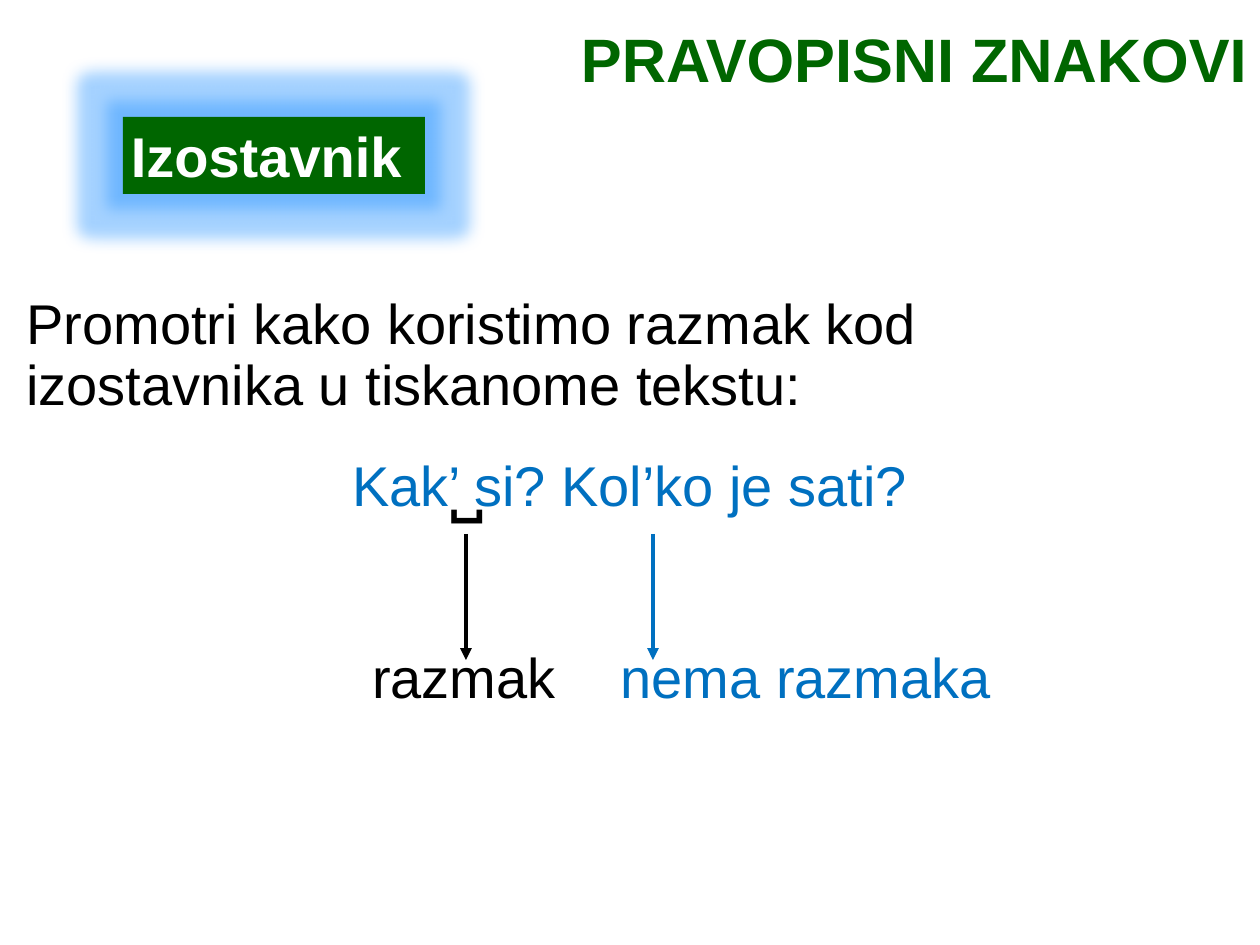
from collections import namedtuple
from dataclasses import dataclass

from lxml import etree
from pptx import Presentation
from pptx import util as u
from pptx.dml.color import RGBColor
from pptx.enum import shapes, text
from pptx.oxml import ns

Box = namedtuple("Box", "left top width height")
EMU_PER_PX = 914400 / 126


@dataclass(frozen=True)
class Theme:
    font: str = "Arial"
    green: str = "006600"
    blue: str = "0070C0"
    black: str = "000000"
    white: str = "FFFFFF"
    glow: str = "2090FF"
    title: int = 35
    body: int = 32
    mark: int = 48
    line: float = 2.25


THEME = Theme()


def px(length):
    return u.Emu(round(length * EMU_PER_PX))


def emu(*lengths):
    return [px(length) for length in lengths]


def add_xml(parent, tag, **attributes):
    return etree.SubElement(parent, ns.qn(tag), attributes)


def add_text(page, box, words, size=THEME.body, color=THEME.black, bold=False,
             align=text.PP_ALIGN.LEFT, anchor=text.MSO_ANCHOR.TOP,
             spacing=0.9, before=7.5, inset=None):
    frame = page.shapes.add_textbox(*emu(*box)).text_frame
    frame.word_wrap = True
    frame.vertical_anchor = anchor
    if inset:
        frame.margin_left = frame.margin_right = px(inset[0])
        frame.margin_top = frame.margin_bottom = px(inset[1])
    para = frame.paragraphs[0]
    para.alignment = align
    para.line_spacing = spacing
    para.space_before = u.Pt(before)
    span = para.add_run()
    span.text = words
    span.font.name = THEME.font
    span.font.size = u.Pt(size)
    span.font.bold = bold
    span.font.color.rgb = RGBColor.from_string(color)


def add_arrow(page, left, top, length, color):
    arrow = page.shapes.add_connector(
        shapes.MSO_CONNECTOR.STRAIGHT, *emu(left, top, left, top + length))
    arrow.line.color.rgb = RGBColor.from_string(color)
    arrow.line.width = u.Pt(THEME.line)
    add_xml(arrow.line._get_or_add_ln(), "a:tailEnd", type="triangle")
    add_xml(arrow._element.spPr, "a:effectLst")


def add_topic(page, box):
    panel = page.shapes.add_shape(
        shapes.MSO_SHAPE.RECTANGLE,
        *emu(box.left + 1, box.top + 29, box.width - 1, box.height - 29))
    panel.fill.solid()
    panel.fill.fore_color.rgb = RGBColor.from_string(THEME.green)
    panel.line.fill.background()
    panel.shadow.inherit = False
    effects = panel._element.spPr.find(ns.qn("a:effectLst"))
    glow = add_xml(effects, "a:glow", rad=str(px(31)))
    color = add_xml(glow, "a:srgbClr", val=THEME.glow)
    add_xml(color, "a:alpha", val="40000")
    add_text(page, box, "Izostavnik", color=THEME.white, bold=True,
             anchor=text.MSO_ANCHOR.BOTTOM, spacing=1, before=10, inset=(9, 5))


def add_heading(page, box):
    add_text(page, box, "PRAVOPISNI ZNAKOVI", size=THEME.title,
             color=THEME.green, bold=True, align=text.PP_ALIGN.RIGHT,
             anchor=text.MSO_ANCHOR.BOTTOM, before=0)


def add_instruction(page, box):
    add_text(page, box, "Promotri kako koristimo razmak kod "
                        "izostavnika u tiskanome tekstu:")


def add_example(page, box):
    labels = [
        (0, 24, 1260, "Kak’ si? Kol’ko je sati?", THEME.body, THEME.blue),
        (416, 0, 103, "˽", THEME.mark, THEME.black),
        (471, 216, 670, "nema razmaka", THEME.body, THEME.blue),
        (307, 216, 314, "razmak", THEME.body, THEME.black),
    ]
    for left, top, width, words, size, color in labels:
        add_text(page, Box(box.left + left, box.top + top, width, 91), words,
                 size=size, color=color, align=text.PP_ALIGN.CENTER)
    for left, color in ((466, THEME.black), (653, THEME.blue)):
        add_arrow(page, box.left + left, box.top + 106, 126, color)


def main():
    deck = Presentation()
    deck.slide_width, deck.slide_height = emu(1260, 945)
    page = deck.slides.add_slide(deck.slide_layouts[6])
    add_topic(page, Box(122, 88, 303, 106))
    add_heading(page, Box(131, 6, 1129, 96))
    add_example(page, Box(0, 428, 1260, 307))
    add_instruction(page, Box(14, 290, 1179, 159))
    deck.save("out.pptx")


if __name__ == "__main__":
    main()
